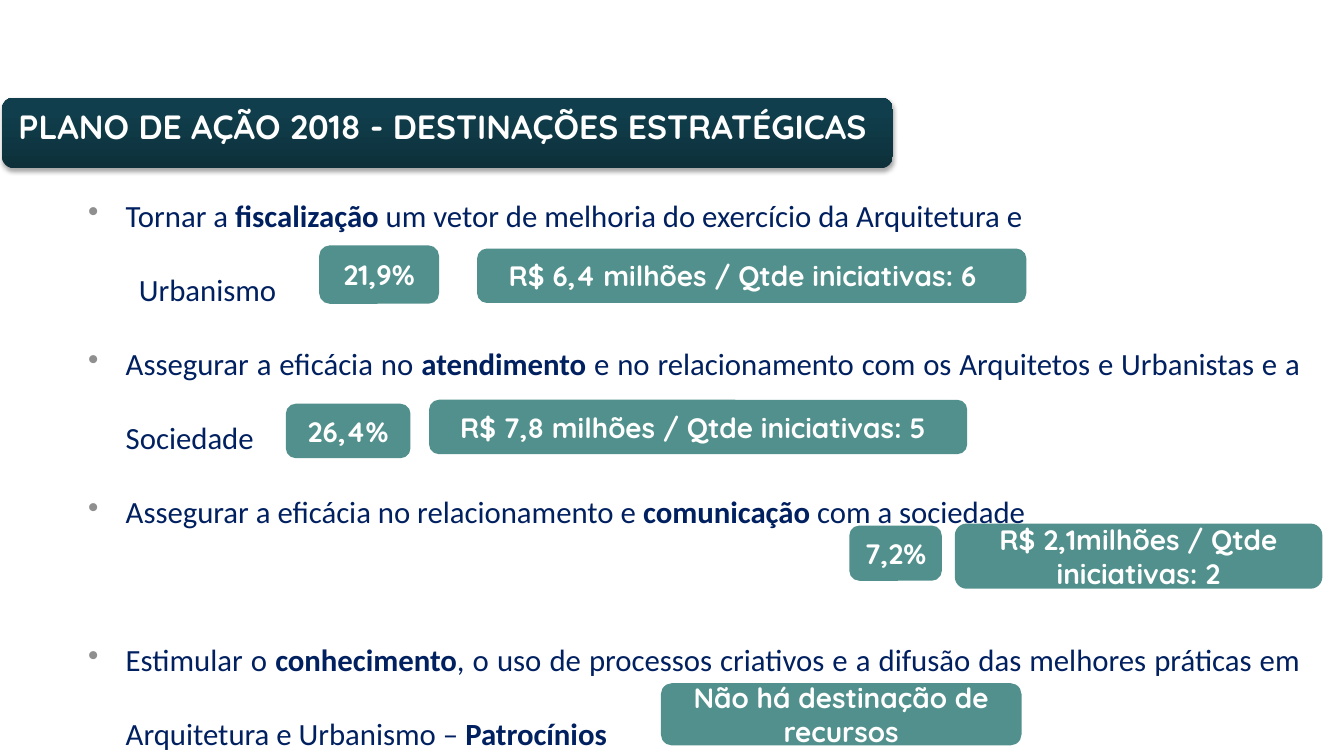
from copy import deepcopy

from lxml import etree
from pptx import Presentation
from pptx.dml.color import RGBColor
from pptx.enum.shapes import MSO_SHAPE
from pptx.enum.text import MSO_ANCHOR, MSO_AUTO_SIZE, PP_ALIGN
from pptx.oxml.ns import qn
from pptx.util import Cm, Pt

ROUNDED = MSO_SHAPE.ROUNDED_RECTANGLE
TOP, MIDDLE = MSO_ANCHOR.TOP, MSO_ANCHOR.MIDDLE
CENTER, JUSTIFY = PP_ALIGN.CENTER, PP_ALIGN.JUSTIFY
GROW = MSO_AUTO_SIZE.SHAPE_TO_FIT_TEXT
NAVY, TEAL, WHITE, GRAY = "002060", "51908C", "FFFFFF", "8F8F8F"


def color(hex_value):
    return RGBColor.from_string(hex_value)


def add_label(text, box, size, anchor, extra_right):
    """Rounded box with bold white centred text."""
    label = slide.shapes.add_shape(ROUNDED, *(Cm(v) for v in box))
    label.shadow.inherit = False
    frame = label.text_frame
    frame_format = {"word_wrap": True, "vertical_anchor": anchor,
                    "margin_left": Cm(0.25), "margin_right": Cm(0.25 + extra_right),
                    "margin_top": Cm(0.13), "margin_bottom": Cm(0.13)}
    for name, value in frame_format.items():
        setattr(frame, name, value)
    paragraph = frame.paragraphs[0]
    paragraph.alignment = CENTER
    run = paragraph.add_run()
    run.text = text
    for name, value in {"name": "Quicksand", "size": Pt(size), "bold": True}.items():
        setattr(run.font, name, value)
    run.font.color.rgb = color(WHITE)
    return label


prs = Presentation()
prs.slide_width, prs.slide_height = Cm(33.87), Cm(19.05)
slide = prs.slides.add_slide(prs.slide_layouts[6])

# Strategic goals: bullet, left margin in cm, space before in pt, (text, bold) runs
goals = [
    (True, 2.21, 0, [("Tornar a ", False), ("fiscalização", True),
                     (" um vetor de melhoria do exercício da Arquitetura e", False)]),
    (False, 2.54, 0, [("Urbanismo", False)]),
    (True, 2.21, 0, [("Assegurar a eficácia no ", False), ("atendimento", True),
                     (" e no relacionamento com os Arquitetos e Urbanistas e a Sociedade", False)]),
    (True, 2.21, 0, [("Assegurar a eficácia no relacionamento e ", False),
                     ("comunicação", True), (" com a sociedade", False)]),
    (True, 2.21, 53, [("Estimular o ", False), ("conhecimento", True),
                      (", o uso de processos criativos e a difusão das melhores práticas em "
                       "Arquitetura e Urbanismo – ", False), ("Patrocínios", True)]),
]
goal_list = slide.shapes.add_textbox(Cm(0.71), Cm(3.91), Cm(32.31), Cm(15.29)).text_frame
goal_list.word_wrap = True
goal_list.auto_size = GROW
for index, (bulleted, margin, space_before, runs) in enumerate(goals):
    goal = goal_list.add_paragraph() if index else goal_list.paragraphs[0]
    properties = goal._p.get_or_add_pPr()
    properties.set("marL", str(Cm(margin)))
    properties.set("indent", str(Cm(-0.95) if bulleted else 0))
    if bulleted:
        bullet_color = etree.SubElement(properties, qn("a:buClr"))
        etree.SubElement(bullet_color, qn("a:srgbClr"), val=GRAY)
        etree.SubElement(properties, qn("a:buChar"), char="•")
    goal.alignment = JUSTIFY
    goal.line_spacing = 2.0
    if space_before:
        goal.space_before = Pt(space_before)
    for text, bold in runs:
        run = goal.add_run()
        run.text = text
        for name, value in {"name": "Calibri", "size": Pt(22), "bold": bold}.items():
            setattr(run.font, name, value)
        run.font.color.rgb = color(NAVY)

# Shares and amounts: text, box in cm, extra right inset in cm
allocations = [
    ("21,9%", (8.08, 6.22, 2.95, 1.4), 0),
    ("26,4%", (7.24, 10.21, 3.07, 1.3), 0),
    ("7,2%", (21.44, 13.28, 2.26, 1.32), 0),
    ("R$ 6,4 milhões / Qtde iniciativas: 6", (12.06, 6.3, 13.77, 1.3), 0.45),
    ("R$ 7,8 milhões / Qtde iniciativas: 5", (10.85, 10.11, 13.49, 1.3), 0.25),
    ("R$ 2,1milhões / Qtde iniciativas: 2", (24.1, 13.23, 9.19, 1.57), 0),
    ("Não há destinação de recursos", (16.69, 17.25, 9.02, 1.5), 0),
]
for text, box, extra_right in allocations:
    allocation = add_label(text, box, 20, MIDDLE, extra_right)
    allocation.fill.solid()
    allocation.fill.fore_color.rgb = color(TEAL)
    allocation.line.color.rgb = color(TEAL)
    allocation.line.width = Pt(2)

# Title banner with three-stop gradient
title = add_label("PLANO DE AÇÃO 2018 - DESTINAÇÕES ESTRATÉGICAS",
                  (0.05, 2.46, 22.45, 1.78), 24, TOP, 0.25)
title.line.fill.background()
title.fill.gradient()
title.fill.gradient_angle = 90
stop_list = title._element.spPr.find(".//" + qn("a:gsLst"))
stop_list.append(deepcopy(stop_list[-1]))
banner_stops = [(0, "0D303A"), (0.8, "103E4C"), (1, "0F3F4D")]
for stop, (position, shade) in zip(title.fill.gradient_stops, banner_stops):
    stop.position = position
    stop.color.rgb = color(shade)

# Soft shadow below the banner
effects = title._element.spPr.find(qn("a:effectLst"))
shadow = etree.SubElement(effects, qn("a:outerShdw"), blurRad=str(Pt(3.1)),
                          dist=str(Pt(1.8)), dir="5400000", rotWithShape="0")
shadow_color = etree.SubElement(shadow, qn("a:srgbClr"), val="000000")
etree.SubElement(shadow_color, qn("a:alpha"), val="35000")

prs.save("out.pptx")
